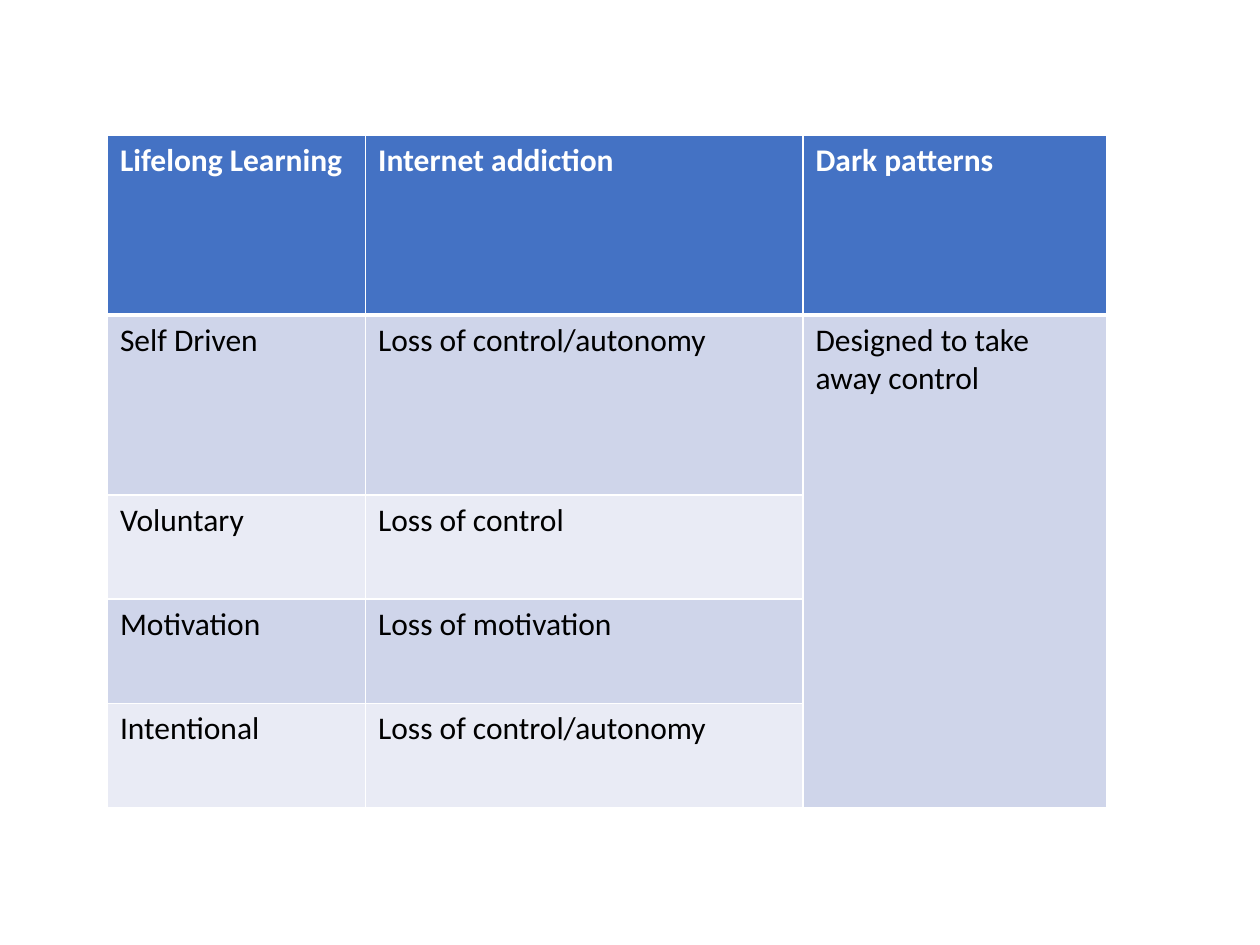
from pptx import Presentation
from pptx.dml.color import RGBColor
from pptx.oxml.ns import qn
from pptx.util import Pt
from lxml.etree import SubElement

WHITE = RGBColor(0xFF, 0xFF, 0xFF)
BLACK = RGBColor(0, 0, 0)
BLUE = RGBColor(0x44, 0x72, 0xC4)
DARK = RGBColor(0xCF, 0xD5, 0xEA)
LIGHT = RGBColor(0xE9, 0xEB, 0xF5)


def write(cell, text, color=BLACK, bold=False, size=18, font="Calibri"):
    run = cell.text_frame.paragraphs[0].add_run()
    run.text = text
    run.font.name = font
    run.font.size = Pt(size)
    run.font.bold = bold
    run.font.color.rgb = color


def edge(cell, side, width):
    line = SubElement(cell._tc.get_or_add_tcPr(), qn(f"a:ln{side}"),
                      w=str(Pt(width)))
    fill = SubElement(line, qn("a:solidFill"))
    SubElement(fill, qn("a:srgbClr"), val=str(WHITE))


# Slide
prs = Presentation()
prs.slide_width, prs.slide_height = Pt(720), Pt(540)
slide = prs.slides.add_slide(prs.slide_layouts[6])

# Table grid
rows = [
    ["Lifelong Learning", "Internet addiction", "Dark patterns"],
    ["Self Driven", "Loss of control/autonomy", "Designed to take away control"],
    ["Voluntary", "Loss of control", ""],
    ["Motivation", "Loss of motivation", ""],
    ["Intentional", "Loss of control/autonomy", ""],
]
widths = [147.5, 250, 173.5]
heights = [102.8, 102.8, 59.6, 59.6, 59.6]
table = slide.shapes.add_table(
    len(rows), len(widths), Pt(61.4), Pt(77.2),
    Pt(sum(widths)), Pt(sum(heights))).table
for col, width in zip(table.columns, widths):
    col.width = Pt(width)
for row, height in zip(table.rows, heights):
    row.height = Pt(height)

# Dark patterns cover all four traits
table.cell(1, 2).merge(table.cell(4, 2))

# Cells: borders go before the fill
for r, texts in enumerate(rows):
    head = r == 0
    for c, text in enumerate(texts):
        cell = table.cell(r, c)
        for side in "LRTB":
            thick = (head and side == "B") or (r == 1 and side == "T")
            edge(cell, side, 3 if thick else 1)
        cell.fill.solid()
        band = DARK if r % 2 or c == 2 else LIGHT
        cell.fill.fore_color.rgb = BLUE if head else band
        if text:
            write(cell, text, color=WHITE if head else BLACK, bold=head)

prs.save("out.pptx")
